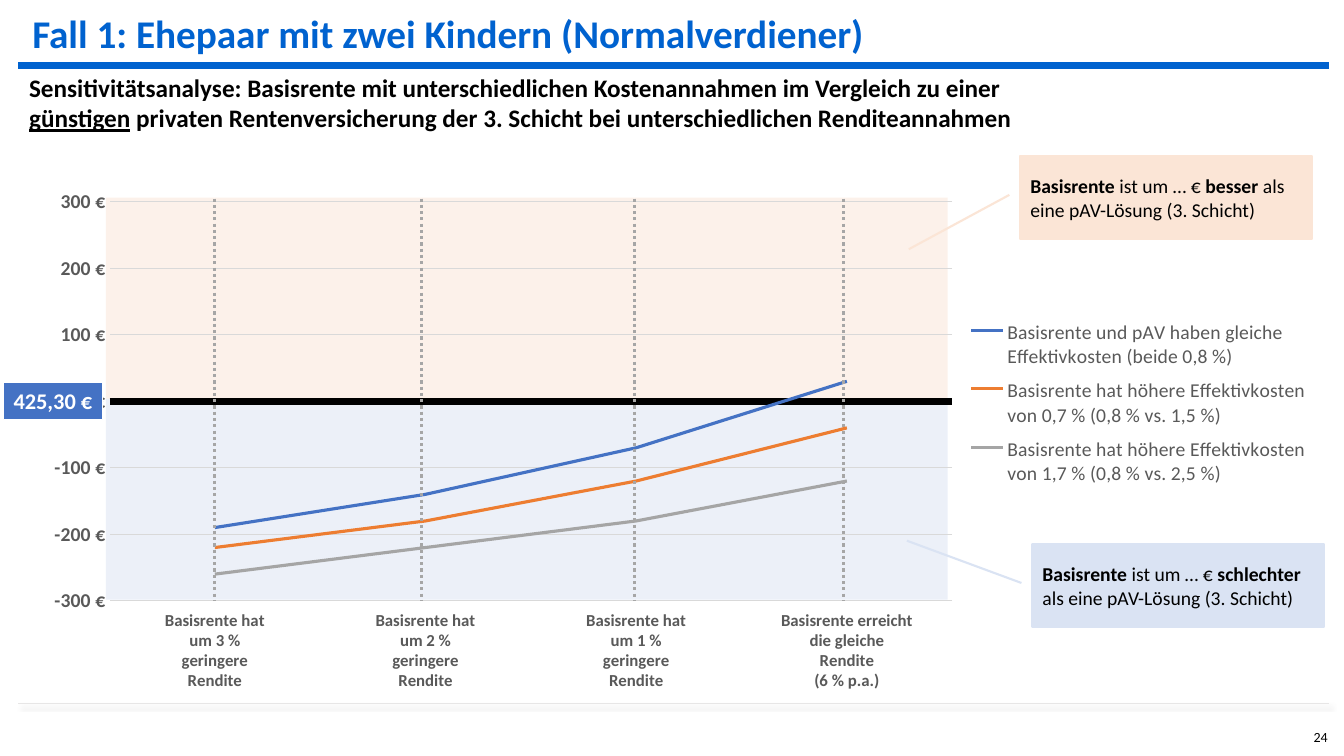
from lxml import etree
from pptx import Presentation
from pptx.chart.data import CategoryChartData
from pptx.dml.color import RGBColor
from pptx.enum.chart import XL_CHART_TYPE, XL_LEGEND_POSITION, XL_TICK_LABEL_POSITION, XL_TICK_MARK
from pptx.enum.dml import MSO_LINE
from pptx.enum.shapes import MSO_CONNECTOR, MSO_SHAPE
from pptx.enum.text import MSO_ANCHOR, PP_ALIGN
from pptx.oxml import parse_xml
from pptx.oxml.ns import qn
from pptx.util import Inches, Pt

RECTANGLE = MSO_SHAPE.RECTANGLE
CALLOUT = MSO_SHAPE.LINE_CALLOUT_1
MIDDLE = MSO_ANCHOR.MIDDLE
NO_TICKS = XL_TICK_MARK.NONE
DOTTED = MSO_LINE.ROUND_DOT
FONT = "Calibri"
COLORS = {
    "title": "0062CF", "text": "000000", "white": "FFFFFF", "footer": "E7E6E6",
    "better": "FBE5D6", "worse": "DAE3F3", "guide": "A6A6A6",
    "grid": "D9D9D9", "label": "595959",
    "equal": "4472C4", "higher": "ED7D31", "highest": "A5A5A5",
}
CATEGORIES = [
    "Basisrente hat\num 3 %\ngeringere\nRendite",
    "Basisrente hat\num 2 %\ngeringere\nRendite",
    "Basisrente hat\num 1 %\ngeringere\nRendite",
    "Basisrente erreicht\ndie gleiche\nRendite\n(6 % p.a.)",
]
SERIES = [
    ("Basisrente und pAV haben gleiche\nEffektivkosten (beide 0,8 %)", "equal", (-190, -140, -70, 30)),
    ("Basisrente hat höhere Effektivkosten\nvon 0,7 % (0,8 % vs. 1,5 %)", "higher", (-220, -180, -120, -40)),
    ("Basisrente hat höhere Effektivkosten\nvon 1,7 % (0,8 % vs. 2,5 %)", "highest", (-260, -220, -180, -120)),
]


def rgb(name):
    return RGBColor.from_string(COLORS[name])


def inches(box):
    return [Inches(length) for length in box]


def set_font(font, size, color, bold=False):
    font.name, font.size, font.bold = FONT, Pt(size), bold
    font.color.rgb = rgb(color)


def add_line(page, start, end, color, width, dash=None, shadow=False):
    line = page.shapes.add_connector(MSO_CONNECTOR.STRAIGHT, *inches(start + end))
    line.line.color.rgb = rgb(color)
    line.line.width = Pt(width)
    if dash:
        line.line.dash_style = dash
    effects = etree.SubElement(line._element.spPr, qn("a:effectLst"))
    if shadow:
        outer = etree.SubElement(effects, qn("a:outerShdw"), blurRad="38100", dist="38100", dir="2700000")
        tint = etree.SubElement(outer, qn("a:srgbClr"), val=COLORS["text"])
        etree.SubElement(tint, qn("a:alpha"), val="40000")


def add_block(page, box, color, kind=RECTANGLE):
    block = page.shapes.add_shape(kind, *inches(box))
    block.shadow.inherit = False
    block.fill.solid()
    block.fill.fore_color.rgb = rgb(color)
    block.line.fill.background()
    return block


def add_text(page, box, text, size):
    frame = page.shapes.add_textbox(*inches(box)).text_frame
    frame.word_wrap = True
    para = frame.paragraphs[0]
    para.text = text
    set_font(para.font, size, "text")
    return para


def add_header(page, box):
    left, top, width, height = box
    title = page.shapes.title
    title.left, title.top, title.width, title.height = inches((left + 0.04, top, width - 0.1, height))
    frame = title.text_frame
    frame.text = "Fall 1: Ehepaar mit zwei Kindern (Normalverdiener)"
    frame.vertical_anchor = MIDDLE
    para = frame.paragraphs[0]
    para.alignment = PP_ALIGN.LEFT
    set_font(para.font, 28, "title", True)
    rule = top + 0.61
    add_line(page, (left, rule), (left + width, rule), "title", 4.5)

    para = add_text(page, (left + 0.01, top + 0.63, 11.19, 0.71),
                    "Sensitivitätsanalyse: Basisrente mit unterschiedlichen Kostenannahmen im Vergleich zu einer", 18)
    para.font.bold = True
    para.add_line_break()
    span = para.add_run()
    span.text = "günstigen"
    span.font.underline = True
    para.add_run().text = " privaten Rentenversicherung der 3. Schicht bei unterschiedlichen Renditeannahmen"


def add_zones(page, box):
    """Tint the plot above and below the break-even line."""
    left, top, width, height = box
    half = height / 2
    for offset, color in ((half, "worse"), (0, "better")):
        zone = add_block(page, (left, top + offset, width, half), color)
        tint = zone._element.spPr.find(".//" + qn("a:srgbClr"))
        etree.SubElement(tint, qn("a:alpha"), val="50000")


def set_layout(parent, position, inner=False):
    """Place a plot area or legend by fractions of the chart."""
    target = '<c:layoutTarget val="inner"/>' if inner else ""
    fractions = "".join(f'<c:{tag} val="{value}"/>' for tag, value in zip("xywh", position))
    layout = parse_xml(
        '<c:layout xmlns:c="http://schemas.openxmlformats.org/drawingml/2006/chart"><c:manualLayout>'
        f'{target}<c:xMode val="edge"/><c:yMode val="edge"/>{fractions}</c:manualLayout></c:layout>')
    for old in parent.findall(qn("c:layout")):
        parent.remove(old)
    if inner:
        parent.insert(0, layout)
    else:
        parent.find(qn("c:legendPos")).addnext(layout)


def add_sensitivity_chart(page, box):
    data = CategoryChartData()
    data.categories = CATEGORIES
    for name, _, values in SERIES:
        data.add_series(name, values)
    chart = page.shapes.add_chart(XL_CHART_TYPE.LINE, *inches(box), data).chart
    chart.has_title = False
    set_font(chart.font, 10, "text")

    plot = chart.plots[0]
    plot.vary_by_categories = False
    for series, (_, color, _) in zip(plot.series, SERIES):
        series.smooth = False
        series.format.line.color.rgb = rgb(color)
        series.format.line.width = Pt(2.25)

    categories = chart.category_axis
    categories.tick_label_position = XL_TICK_LABEL_POSITION.LOW
    categories.format.line.color.rgb = rgb("text")
    categories.format.line.width = Pt(5)
    amounts = chart.value_axis
    amounts.minimum_scale, amounts.maximum_scale, amounts.major_unit = -300, 300, 100
    amounts.format.line.fill.background()
    amounts.major_gridlines.format.line.color.rgb = rgb("grid")
    amounts.major_gridlines.format.line.width = Pt(0.75)
    amounts.tick_labels.number_format = '#,##0\\ "€"'
    amounts.tick_labels.number_format_is_linked = False
    for axis, size in ((categories, 12), (amounts, 14)):
        axis.major_tick_mark = axis.minor_tick_mark = NO_TICKS
        set_font(axis.tick_labels.font, size, "label", True)

    chart.has_legend = True
    chart.legend.position = XL_LEGEND_POSITION.RIGHT
    chart.legend.include_in_layout = False
    set_font(chart.legend.font, 14, "label")
    set_layout(chart._chartSpace.chart.plotArea, (0.059, 0.052, 0.652, 0.729), inner=True)
    set_layout(chart.legend._element, (0.72, 0.25, 0.27, 0.34))


def add_callout(page, box, verdict, color, pointer):
    callout = add_block(page, box, color, CALLOUT)
    callout.line.color.rgb = rgb(color)
    callout.line.width = Pt(1.5)
    for index, value in enumerate((0.468, -0.038) + pointer):
        callout.adjustments[index] = value
    frame = callout.text_frame
    frame.word_wrap = True
    frame.vertical_anchor = MIDDLE
    para = frame.paragraphs[0]
    para.alignment = PP_ALIGN.LEFT
    set_font(para.font, 14, "text")
    for text, bold in (("Basisrente", True), (" ist um … € ", False), (verdict, True),
                       (" als eine pAV-Lösung (3. Schicht)", False)):
        span = para.add_run()
        span.text = text
        span.font.bold = bold


def add_base_amount(page, box):
    amount = add_block(page, box, "equal")
    amount.line.color.rgb = rgb("white")
    amount.line.width = Pt(0.75)
    frame = amount.text_frame
    frame.word_wrap = False
    frame.vertical_anchor = MIDDLE
    para = frame.paragraphs[0]
    para.text = "425,30 €"
    para.alignment = PP_ALIGN.CENTER
    set_font(para.font, 16, "white", True)


def main():
    deck = Presentation()
    deck.slide_width, deck.slide_height = Inches(13.33), Inches(7.5)
    page = deck.slides.add_slide(deck.slide_layouts[5])
    add_header(page, (0.18, 0.04, 13, 0.57))
    add_line(page, (0.18, 6.98), (13.18, 6.98), "footer", 1, shadow=True)
    add_zones(page, (1.05, 1.96, 8.35, 3.99))
    add_sensitivity_chart(page, (0.33, 1.72, 12.82, 5.43))
    add_callout(page, (10.12, 1.55, 2.89, 0.82), "besser", "better", (1.125, -0.383))
    add_callout(page, (10.24, 5.4, 2.89, 0.82), "schlechter", "worse", (-0.044, -0.431))
    for x in (2.13, 4.18, 6.29, 8.37):
        add_line(page, (x, 1.97), (x, 5.96), "guide", 2.25, DOTTED)
    add_base_amount(page, (0.03, 3.79, 0.99, 0.37))
    add_text(page, (12.93, 7.18, 0.53, 0.31), "24", 10)
    deck.save("out.pptx")


if __name__ == "__main__":
    main()
